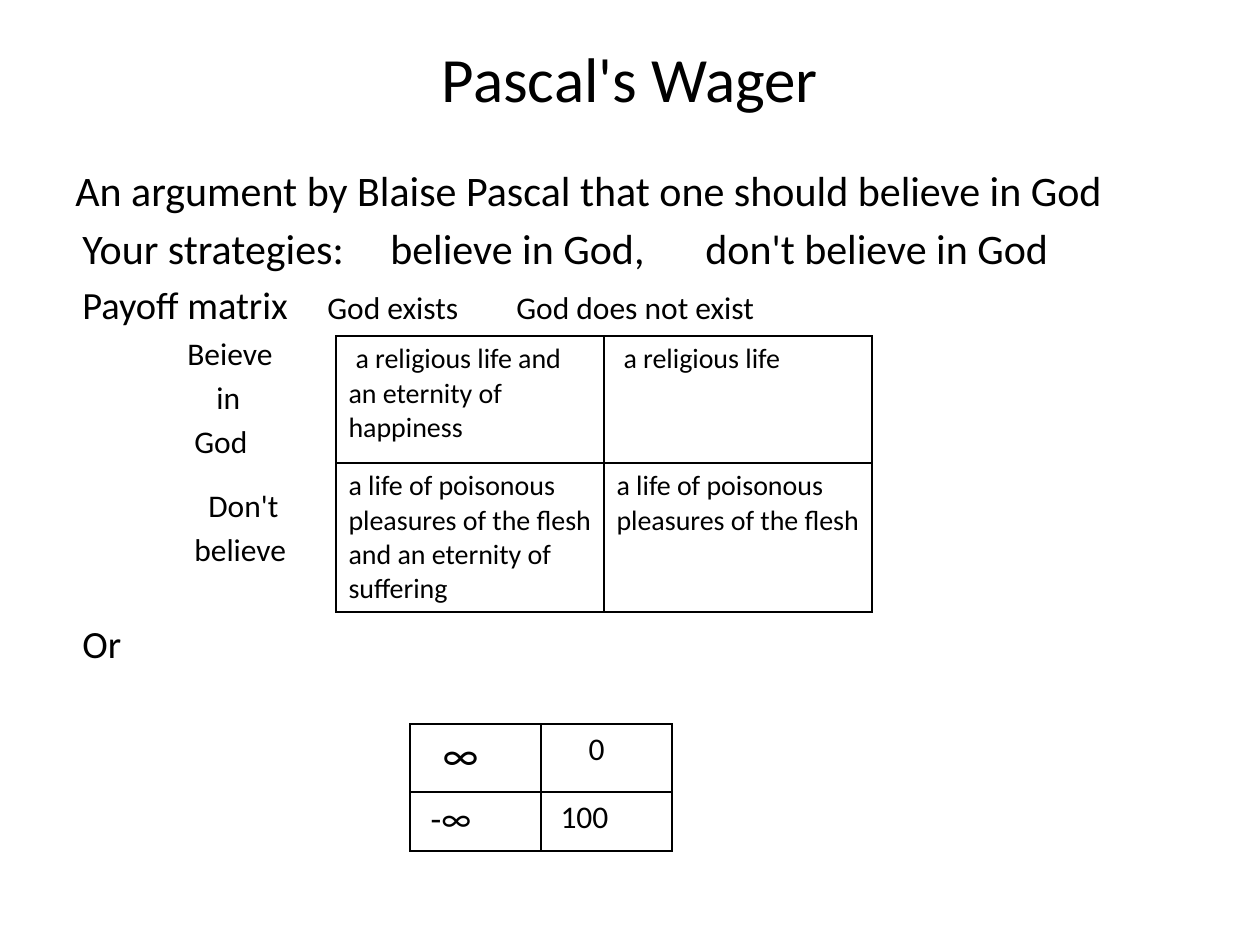
from lxml import etree
from pptx import Presentation
from pptx.dml.color import RGBColor
from pptx.enum.text import MSO_ANCHOR, PP_ALIGN
from pptx.oxml.ns import qn
from pptx.util import Pt

EMU_PER_PX = 914400 / 126
COLORS = {"ink": "000000", "paper": "FFFFFF"}
FONT = "Calibri"
CENTER = PP_ALIGN.CENTER
MIDDLE = MSO_ANCHOR.MIDDLE

# text, size, first-line indent in px, space before in points, tab stops in px
BODY_LINES = [
    ("An argument by Blaise Pascal that one should believe in God", 24, 0, 0, []),
    ("Your strategies:\tbelieve in God,\tdon't believe in God", 24, 7, 4.8, [298, 571]),
    ("Payoff matrix\tGod exists\tGod does not exist", 22, 7, 4.4, [283, 463]),
    ("Beieve", 18, 112, 3.6, []),
    ("in", 18, 141, 3.6, []),
    ("God", 18, 119, 3.6, []),
    ("Don't", 18, 133, 15, []),
    ("believe", 18, 119, 3.6, []),
    ("Or", 22, 7, 30, []),
]
HEADING_SIZE = 18

# text, size, first-line indent in px
OUTCOMES = [
    [("a religious life and an eternity of happiness", 16, 7),
     ("a religious life", 16, 7)],
    [("a life of poisonous pleasures of the flesh and an eternity of suffering", 16, 0),
     ("a life of poisonous pleasures of the flesh", 16, 0)],
]
PAYOFFS = [
    [("∞", 24, 20), ("0", 18, 35)],
    [("-∞", 20, 8), ("100", 18, 7)],
]


def px(length):
    return round(length * EMU_PER_PX)


def style_run(run, size):
    run.font.name = FONT
    run.font.size = Pt(size)
    run.font.color.rgb = RGBColor.from_string(COLORS["ink"])


def fill_paragraph(para, text, size, indent=0):
    para.text = text
    properties = para._p.get_or_add_pPr()
    properties.set("marL", "0")
    properties.set("indent", str(px(indent)))
    for run in para.runs:
        style_run(run, size)


def add_tab_stops(para, stops):
    tab_list = etree.SubElement(para._p.get_or_add_pPr(), qn("a:tabLst"))
    for stop in stops:
        etree.SubElement(tab_list, qn("a:tab"), pos=str(px(stop)), algn="l")


def add_text_frame(page, left, top, width, height):
    box = page.shapes.add_textbox(px(left), px(top), px(width), px(height))
    box.text_frame.word_wrap = True
    return box.text_frame


def add_title(page, text):
    frame = add_text_frame(page, 63, 38, 1134, 78)
    frame.vertical_anchor = MIDDLE
    para = frame.paragraphs[0]
    fill_paragraph(para, text, 36)
    para.alignment = CENTER


def add_body(page):
    frame = add_text_frame(page, 63, 158, 1134, 687)
    for index, (text, size, indent, before, stops) in enumerate(BODY_LINES):
        para = frame.add_paragraph() if index else frame.paragraphs[0]
        if text.startswith("Payoff matrix"):
            label, headings = text.split("\t", 1)
            fill_paragraph(para, label, size, indent)
            run = para.add_run()
            run.text = "\t" + headings
            style_run(run, HEADING_SIZE)
        else:
            fill_paragraph(para, text, size, indent)
        para.space_before = Pt(before)
        if stops:
            add_tab_stops(para, stops)


def outline_cell(cell):
    properties = cell._tc.get_or_add_tcPr()
    for side in ("a:lnL", "a:lnR", "a:lnT", "a:lnB"):
        line = etree.SubElement(properties, qn(side), w=str(Pt(1)))
        fill = etree.SubElement(line, qn("a:solidFill"))
        etree.SubElement(fill, qn("a:srgbClr"), val=COLORS["ink"])
    cell.fill.background()


def add_matrix(page, left, top, column_width, row_heights, rows):
    columns = len(rows[0])
    table = page.shapes.add_table(
        len(rows), columns, px(left), px(top),
        px(column_width * columns), px(sum(row_heights))).table
    table.first_row = False
    table.horz_banding = False
    for column in table.columns:
        column.width = px(column_width)
    for row_index, row in enumerate(rows):
        table.rows[row_index].height = px(row_heights[row_index])
        for column_index, (text, size, indent) in enumerate(row):
            cell = table.cell(row_index, column_index)
            fill_paragraph(cell.text_frame.paragraphs[0], text, size, indent)
            outline_cell(cell)


def main():
    deck = Presentation()
    deck.slide_width, deck.slide_height = px(1260), px(945)
    page = deck.slides.add_slide(deck.slide_layouts[6])
    page.background.fill.solid()
    page.background.fill.fore_color.rgb = RGBColor.from_string(COLORS["paper"])
    add_title(page, "Pascal's Wager")
    add_body(page)
    add_matrix(page, 410, 724, 131, [68, 59], PAYOFFS)
    add_matrix(page, 336, 336, 268, [127, 149], OUTCOMES)
    deck.save("out.pptx")


if __name__ == "__main__":
    main()
